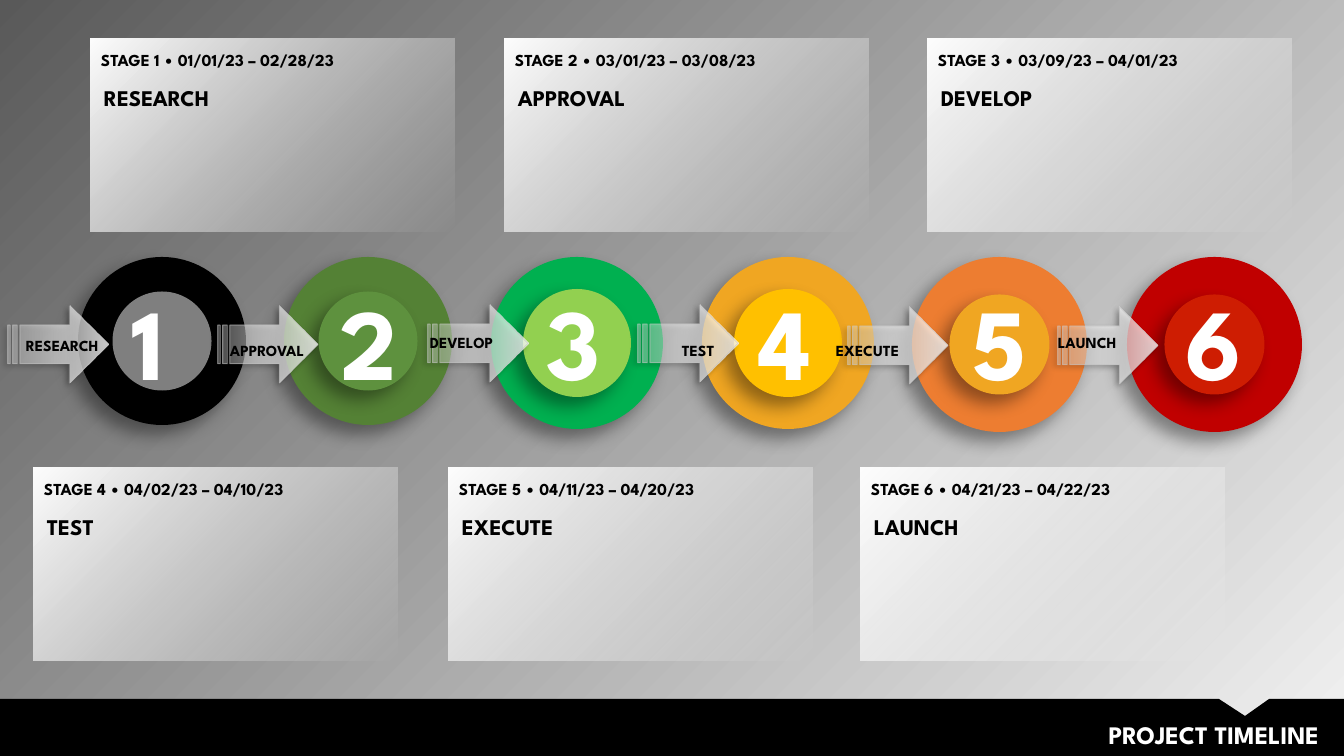
from lxml.etree import SubElement
from pptx import Presentation
from pptx.dml.color import RGBColor
from pptx.enum.shapes import MSO_SHAPE
from pptx.enum.text import MSO_AUTO_SIZE, PP_ALIGN
from pptx.oxml.ns import qn
from pptx.util import Pt

PX = 12192000 / 1344
FONT = "League Spartan"
COLORS = {
    "black": "000000", "white": "FFFFFF", "pale": "F2F2F2", "dark": "595959",
    "silver": "BFBFBF", "gray": "7F7F7F", "forest": "548135", "leaf": "5E913E",
    "green": "00B050", "lime": "92D050", "amber": "F0A622", "gold": "FFC000",
    "orange": "ED7D31", "crimson": "C00000", "red": "CE1D02",
}
RGB = {name: RGBColor.from_string(value) for name, value in COLORS.items()}

deck = Presentation()
deck.slide_width = round(1344 * PX)
deck.slide_height = round(756 * PX)
page = deck.slides.add_slide(deck.slide_layouts[6])


def write(text, *, left, top, width, height, size, color="black", align=PP_ALIGN.LEFT):
    box = page.shapes.add_textbox(*(round(v * PX) for v in (left, top, width, height)))
    frame = box.text_frame
    frame.word_wrap = True
    frame.auto_size = MSO_AUTO_SIZE.SHAPE_TO_FIT_TEXT
    para = frame.paragraphs[0]
    para.alignment = align
    span = para.add_run()
    span.text = text
    span.font.name = FONT
    span.font.size = Pt(size)
    span.font.bold = True
    span.font.color.rgb = RGB[color]


def blend(fill, element, angle, *stops):
    fill.gradient()
    fill.gradient_angle = angle
    for stop, (color, _) in zip(fill.gradient_stops, stops):
        stop.color.rgb = RGB[color]
    for tint, (_, opacity) in zip(element.xpath(".//a:gradFill//a:srgbClr"), stops):
        if opacity < 100:
            SubElement(tint, qn("a:alpha"), val=str(opacity * 1000))


blend(page.background.fill, page.element, 135, ("pale", 40), ("dark", 100))

builder = page.shapes.build_freeform(0, 699, scale=PX)
builder.add_line_segments(
    [(1219, 699), (1245, 716), (1269, 699), (1344, 699), (1344, 756), (0, 756)]
)
footer = builder.convert_to_shape()
footer.shadow.inherit = False
footer.fill.solid()
footer.fill.fore_color.rgb = RGB["black"]
footer.line.fill.background()
write("PROJECT TIMELINE", left=646, top=714, width=683, height=40, size=18,
      color="white", align=PP_ALIGN.RIGHT)

STAGES = [
    ("RESEARCH", "01/01/23 – 02/28/23", 91, 39),
    ("APPROVAL", "03/01/23 – 03/08/23", 505, 39),
    ("DEVELOP", "03/09/23 – 04/01/23", 928, 39),
    ("TEST", "04/02/23 – 04/10/23", 34, 468),
    ("EXECUTE", "04/11/23 – 04/20/23", 449, 468),
    ("LAUNCH", "04/21/23 – 04/22/23", 861, 468),
]
for number, (name, dates, left, top) in enumerate(STAGES, 1):
    card = page.shapes.add_shape(
        MSO_SHAPE.ROUNDED_RECTANGLE, *(round(v * PX) for v in (left, top, 364, 193))
    )
    card.adjustments[0] = 0
    card.shadow.inherit = False
    card.line.fill.background()
    blend(card.fill, card.element, 135, ("pale", 0), ("white", 100))
    write(f"STAGE {number} • {dates}", left=left, top=top + 6, width=366, height=30, size=12)
    write(name, left=left + 3, top=top + 40, width=359, height=37, size=16)

RINGS = [
    (78, 168, 99, "black", "gray"),
    (284, 168, 99, "forest", "leaf"),
    (491, 172, 108, "green", "lime"),
    (702, 172, 108, "amber", "gold"),
    (912, 175, 100, "orange", "amber"),
    (1127, 175, 100, "crimson", "red"),
]
raised = []
for left, outer, inner, rim, core in RINGS:
    for size, color in ((outer, rim), (inner, core)):
        inset = (outer - size) / 2
        disc = page.shapes.add_shape(
            MSO_SHAPE.OVAL, *(round(v * PX) for v in (left + inset, 257 + inset, size, size))
        )
        disc.fill.solid()
        disc.fill.fore_color.rgb = RGB[color]
        disc.line.fill.background()
        raised.append((disc, 13, 9))

for index, top in enumerate((306, 306, 305, 305, 307, 307)):
    arrow = page.shapes.add_shape(
        MSO_SHAPE.STRIPED_RIGHT_ARROW,
        *(round(v * PX) for v in (8 + 210 * index, top, 100, 77)),
    )
    blend(arrow.fill, arrow.element, 0, ("white", 29), ("white", 80))
    arrow.line.width = Pt(0.75)
    arrow.line.color.rgb = RGB["silver"]
    SubElement(arrow.element.xpath(".//a:ln//a:srgbClr")[0], qn("a:alpha"), val="49000")
    raised.append((arrow, 4, 3))

for shape, blur, distance in raised:
    shape.shadow.inherit = False
    effects = shape.element.xpath(".//a:effectLst")[0]
    shadow = SubElement(
        effects, qn("a:outerShdw"), blurRad=str(Pt(blur)), dist=str(Pt(distance)),
        dir="8100000", algn="tr", rotWithShape="0",
    )
    tint = SubElement(shadow, qn("a:srgbClr"), val=COLORS["black"])
    SubElement(tint, qn("a:alpha"), val="40000")

for number, left in enumerate((122, 331, 537, 749, 963, 1176), 1):
    write(str(number), left=left, top=275, width=93, height=132, size=72, color="white")

LABELS = [(16, 331, 106), (220, 336, 106), (420, 328, 106),
          (672, 336, 74), (826, 336, 106), (1048, 328, 106)]
for (name, *_), (left, top, width) in zip(STAGES, LABELS):
    write(name, left=left, top=top, width=width, height=29, size=11)

deck.save("out.pptx")
